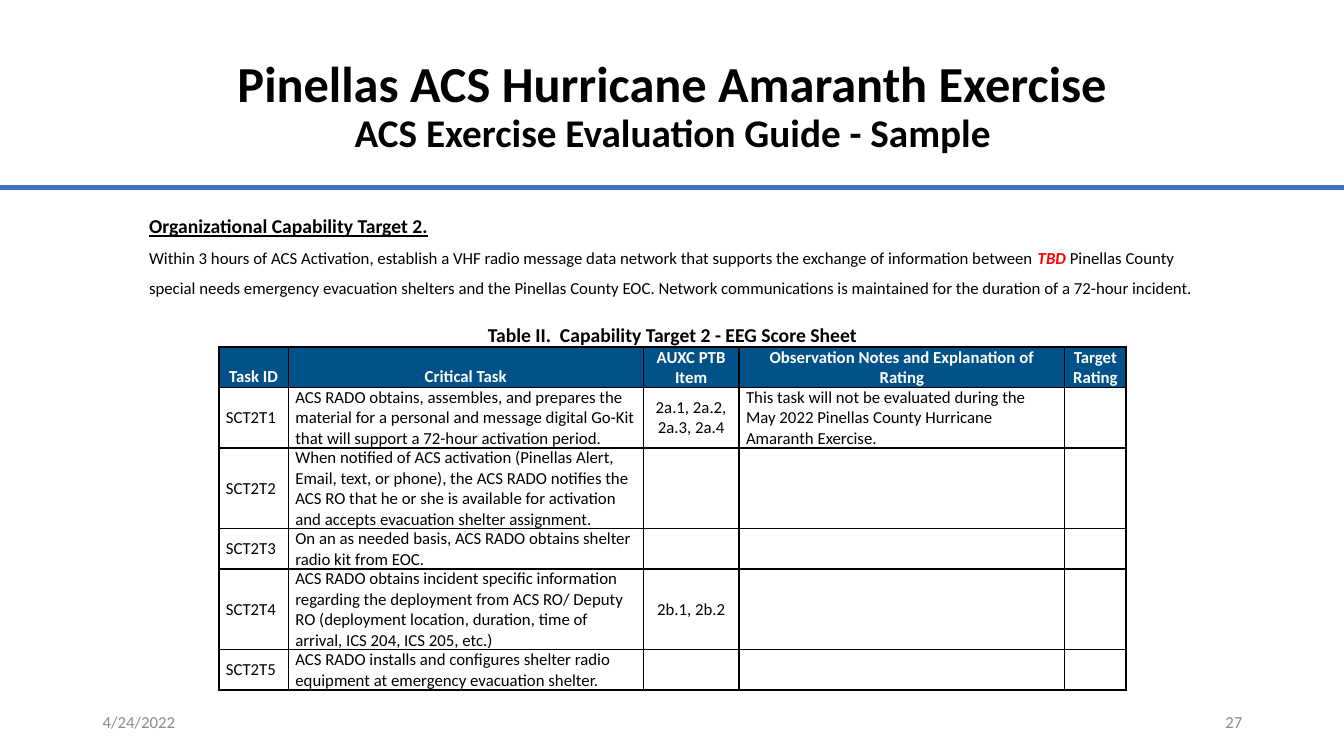
from pptx import Presentation
from pptx.dml.color import RGBColor
from pptx.enum import shapes, text
from pptx.oxml import parse_xml
from pptx.oxml.ns import nsdecls
from pptx.util import Inches, Pt

BLACK = RGBColor(0x00, 0x00, 0x00)
WHITE = RGBColor(0xFF, 0xFF, 0xFF)
RED = RGBColor(0xFF, 0x00, 0x00)
GREY = RGBColor(0x8C, 0x8C, 0x8C)
RULE_BLUE = RGBColor(0x44, 0x72, 0xC4)
HEADER_BLUE = RGBColor(0x00, 0x52, 0x88)

LEFT, CENTER, RIGHT = text.PP_ALIGN.LEFT, text.PP_ALIGN.CENTER, text.PP_ALIGN.RIGHT
TOP, MIDDLE, BOTTOM = text.MSO_ANCHOR.TOP, text.MSO_ANCHOR.MIDDLE, text.MSO_ANCHOR.BOTTOM

SLIDE_WIDTH, SLIDE_HEIGHT = 13.33, 7.5
COLUMN_WIDTHS = [0.69, 3.52, 0.95, 3.23, 0.61]
ROW_HEIGHTS = [0.23, 0.4, 0.6, 0.8, 0.4, 0.8, 0.4]
THIN, THICK = 1, 1.5

CAPTION = "Table II.  Capability Target 2 - EEG Score Sheet"
HEADINGS = ["Task ID", "Critical Task", "AUXC PTB Item",
            "Observation Notes and Explanation of Rating", "Target Rating"]
TASKS = [
    ["SCT2T1", "ACS RADO obtains, assembles, and prepares the material for a personal and "
     "message digital Go-Kit that will support a 72-hour activation period.",
     "2a.1, 2a.2, 2a.3, 2a.4",
     "This task will not be evaluated during the May 2022 Pinellas County Hurricane "
     "Amaranth Exercise.", ""],
    ["SCT2T2", "When notified of ACS activation (Pinellas Alert, Email, text, or phone), "
     "the ACS RADO notifies the ACS RO that he or she is available for activation and "
     "accepts evacuation shelter assignment.", "", "", ""],
    ["SCT2T3", "On an as needed basis, ACS RADO obtains shelter radio kit from EOC.",
     "", "", ""],
    ["SCT2T4", "ACS RADO obtains incident specific information regarding the deployment "
     "from ACS RO/ Deputy RO (deployment location, duration, time of arrival, "
     "ICS 204, ICS 205, etc.)", "2b.1, 2b.2", "", ""],
    ["SCT2T5", "ACS RADO installs and configures shelter radio equipment at emergency "
     "evacuation shelter.", "", "", ""],
]


def add_run(paragraph, words, size, color=BLACK, bold=False, italic=False, underline=False):
    run = paragraph.add_run()
    run.text = words
    font = run.font
    font.name, font.size, font.color.rgb = "Calibri", Pt(size), color
    font.bold, font.italic, font.underline = bold, italic, underline


def add_text_frame(slide, box, anchor=MIDDLE):
    frame = slide.shapes.add_textbox(*map(Inches, box)).text_frame
    frame.word_wrap = True
    frame.vertical_anchor = anchor
    return frame


def add_title(slide, box):
    title = add_text_frame(slide, box).paragraphs[0]
    title.alignment, title.line_spacing = CENTER, 0.9
    add_run(title, "Pinellas ACS Hurricane Amaranth Exercise", 36, bold=True)
    title.add_line_break()
    add_run(title, "ACS Exercise Evaluation Guide - Sample", 28, bold=True)


def add_title_rule(slide, top):
    rule = slide.shapes.add_connector(
        shapes.MSO_CONNECTOR.STRAIGHT, 0, Inches(top), Inches(SLIDE_WIDTH), Inches(top))
    rule.line.color.rgb, rule.line.width = RULE_BLUE, Pt(3)
    rule._element.spPr.append(parse_xml(f"<a:effectLst {nsdecls('a')}/>"))


def add_target(slide, box):
    frame = add_text_frame(slide, box, TOP)
    heading, target = frame.paragraphs[0], frame.add_paragraph()
    heading.line_spacing = target.line_spacing = 1.5
    target.space_after = Pt(8)
    add_run(heading, "Organizational Capability Target 2.", 14, bold=True, underline=True)
    add_run(target, "Within 3 hours of ACS Activation, establish a VHF radio message data "
            "network that supports the exchange of information between ", 12)
    add_run(target, "TBD ", 12, RED, bold=True, italic=True)
    add_run(target, "Pinellas County special needs emergency evacuation shelters and the "
            "Pinellas County EOC. Network communications is maintained for the duration "
            "of a 72-hour incident.", 12)


def set_borders(cell, **widths):
    """Draw the sides L, R, T and B in black; a width of 0 leaves a side open."""
    properties = cell._tc.get_or_add_tcPr()
    for position, side in enumerate("LRTB"):
        width = widths[side]
        paint = '<a:solidFill><a:srgbClr val="000000"/></a:solidFill>' if width else "<a:noFill/>"
        properties.insert(position, parse_xml(
            f'<a:ln{side} {nsdecls("a")} w="{Pt(width)}">{paint}</a:ln{side}>'))


def fill_cell(cell, words, size=12, color=BLACK, bold=False, align=LEFT, anchor=TOP):
    cell.margin_left = cell.margin_right = Inches(0.07)
    cell.margin_top = cell.margin_bottom = 0
    cell.vertical_anchor = anchor
    cell.fill.background()
    paragraph = cell.text_frame.paragraphs[0]
    paragraph.alignment = align
    if words:
        add_run(paragraph, words, size, color, bold)


def add_score_sheet(slide, left, top):
    table = slide.shapes.add_table(
        len(ROW_HEIGHTS), len(COLUMN_WIDTHS), Inches(left), Inches(top),
        Inches(sum(COLUMN_WIDTHS)), Inches(sum(ROW_HEIGHTS))).table
    table.first_row = table.horz_banding = False
    for column, width in zip(table.columns, COLUMN_WIDTHS):
        column.width = Inches(width)
    for row, height in zip(table.rows, ROW_HEIGHTS):
        row.height = Inches(height)

    last = len(COLUMN_WIDTHS) - 1
    caption = table.cell(0, 0)
    caption.merge(table.cell(0, last))
    fill_cell(caption, CAPTION, 14, bold=True, align=CENTER, anchor=BOTTOM)
    for c in range(last + 1):
        set_borders(table.cell(0, c), L=0, R=0, T=0, B=THICK)

    for r, entries in enumerate([HEADINGS] + TASKS, start=1):
        for c, words in enumerate(entries):
            cell = table.cell(r, c)
            if r == 1:
                fill_cell(cell, words, color=WHITE, bold=True, align=CENTER, anchor=BOTTOM)
                cell.fill.solid()
                cell.fill.fore_color.rgb = HEADER_BLUE
            else:
                fill_cell(cell, words, align=CENTER if c == 2 else LEFT,
                          anchor=MIDDLE if c in (0, 2) else TOP)
            set_borders(cell, L=THICK if c == 0 else THIN, R=THICK if c == last else THIN,
                        T=THICK if r <= 2 else THIN, B=THICK if r == 1 else THIN)


def add_footer(slide, box, words, align):
    footer = add_text_frame(slide, box).paragraphs[0]
    footer.alignment = align
    add_run(footer, words, 12, GREY)


def main():
    deck = Presentation()
    deck.slide_width, deck.slide_height = Inches(SLIDE_WIDTH), Inches(SLIDE_HEIGHT)
    slide = deck.slides.add_slide(deck.slide_layouts[6])
    add_title_rule(slide, 1.86)
    add_title(slide, (1.76, 0.4, 9.82, 1.34))
    add_target(slide, (1.38, 1.96, 10.59, 1.03))
    add_score_sheet(slide, 2.17, 3.21)
    add_footer(slide, (0.92, 6.96, 3, 0.4), "4/24/2022", LEFT)
    add_footer(slide, (9.42, 6.96, 3, 0.4), "27", RIGHT)
    deck.save("out.pptx")


if __name__ == "__main__":
    main()
